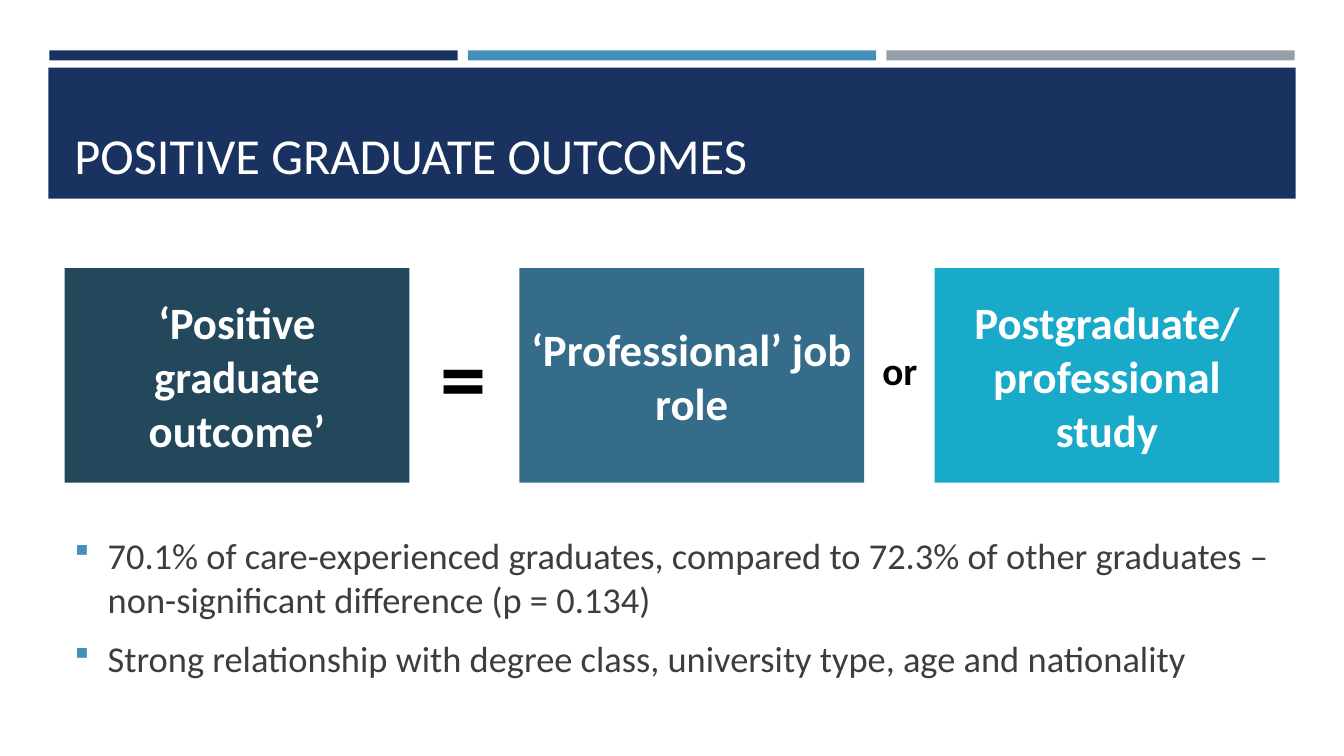
from dataclasses import dataclass

import pptx
import pptx.dml.color
import pptx.enum.shapes
import pptx.enum.text
import pptx.oxml
import pptx.oxml.ns
import pptx.util

PX = 9144
ALIGN = pptx.enum.text.PP_ALIGN
ANCHOR = pptx.enum.text.MSO_ANCHOR


@dataclass(frozen=True)
class Theme:
    font: str = "Calibri"
    navy: str = "1A3260"
    blue: str = "4590B8"
    grey: str = "969FA7"
    slate: str = "23485C"
    steel: str = "346C8A"
    cyan: str = "19AAC9"
    white: str = "FFFFFF"
    black: str = "000000"
    body_colour: str = "3D3D3D"
    title_size: int = 36
    card_size: int = 32
    body_size: int = 26
    equals_size: int = 66
    or_size: int = 28


@dataclass(frozen=True)
class Area:
    left: int
    top: int
    width: int
    height: int

    def emu(self) -> list[int]:
        return [length * PX for length in (self.left, self.top, self.width, self.height)]


@dataclass(frozen=True)
class Card:
    text: str
    left: int
    fill: str


@dataclass(frozen=True)
class Joiner:
    text: str
    area: Area
    size: int


THEME = Theme()
STRIPES = [THEME.navy, THEME.blue, THEME.grey]
CARDS = [
    Card("‘Positive graduate outcome’", 64, THEME.slate),
    Card("‘Professional’ job role", 515, THEME.steel),
    Card("Postgraduate/ professional study", 927, THEME.cyan),
]
JOINERS = [
    Joiner("=", Area(394, 312, 131, 121), THEME.equals_size),
    Joiner("or", Area(827, 339, 131, 57), THEME.or_size),
]
FINDINGS = [
    "70.1% of care-experienced graduates, compared to 72.3% of other graduates "
    "– non-significant difference (p = 0.134)",
    "Strong relationship with degree class, university type, age and nationality",
]


def add_block(page, area: Area, fill: str):
    block = page.shapes.add_shape(pptx.enum.shapes.MSO_SHAPE.RECTANGLE, *area.emu())
    block.shadow.inherit = False
    block.fill.solid()
    block.fill.fore_color.rgb = pptx.dml.color.RGBColor.from_string(fill)
    block.line.fill.background()
    return block


def add_bullet(para) -> None:
    properties = para._p.get_or_add_pPr()
    properties.set("marL", str(33 * PX))
    properties.set("indent", str(-33 * PX))
    namespace = pptx.oxml.ns.nsdecls("a")
    for markup in (
        f'<a:buClr {namespace}><a:srgbClr val="{THEME.blue}"/></a:buClr>',
        f'<a:buSzPct {namespace} val="92000"/>',
        f'<a:buFont {namespace} typeface="Wingdings" charset="2"/>',
        f'<a:buChar {namespace} char="§"/>',
    ):
        properties.append(pptx.oxml.parse_xml(markup))


def write(box, *texts: str, size: int, colour: str, bold: bool = False,
          align=ALIGN.LEFT, anchor=ANCHOR.TOP, bullets: bool = False) -> None:
    frame = box.text_frame
    frame.word_wrap = True
    frame.vertical_anchor = anchor
    for index, text in enumerate(texts):
        para = frame.add_paragraph() if index else frame.paragraphs[0]
        para.alignment = align
        if bullets:
            add_bullet(para)
            para.space_before = pptx.util.Pt(5 if index else 0)
            para.space_after = pptx.util.Pt(6)
        span = para.add_run()
        span.text = text
        span.font.name = THEME.font
        span.font.size = pptx.util.Pt(size)
        span.font.bold = bold
        span.font.color.rgb = pptx.dml.color.RGBColor.from_string(colour)


def build_page(page) -> None:
    for index, fill in enumerate(STRIPES):
        add_block(page, Area(49 + 415 * index, 50, 405, 10), fill)
    add_block(page, Area(48, 67, 1237, 130), THEME.navy)

    title = page.shapes.add_textbox(*Area(64, 77, 1206, 111).emu())
    write(title, "POSITIVE GRADUATE OUTCOMES", size=THEME.title_size,
          colour=THEME.white, anchor=ANCHOR.BOTTOM)

    findings = page.shapes.add_textbox(*Area(64, 524, 1206, 182).emu())
    write(findings, *FINDINGS, size=THEME.body_size, colour=THEME.body_colour, bullets=True)

    for card in CARDS:
        block = add_block(page, Area(card.left, 266, 342, 213), card.fill)
        write(block, card.text, size=THEME.card_size, colour=THEME.white, bold=True,
              align=ALIGN.CENTER, anchor=ANCHOR.MIDDLE)

    for joiner in JOINERS:
        box = page.shapes.add_textbox(*joiner.area.emu())
        write(box, joiner.text, size=joiner.size, colour=THEME.black, bold=True,
              align=ALIGN.CENTER)


def main() -> None:
    deck = pptx.Presentation()
    deck.slide_width = 1333 * PX
    deck.slide_height = 750 * PX
    build_page(deck.slides.add_slide(deck.slide_layouts[6]))
    deck.save("out.pptx")


if __name__ == "__main__":
    main()
